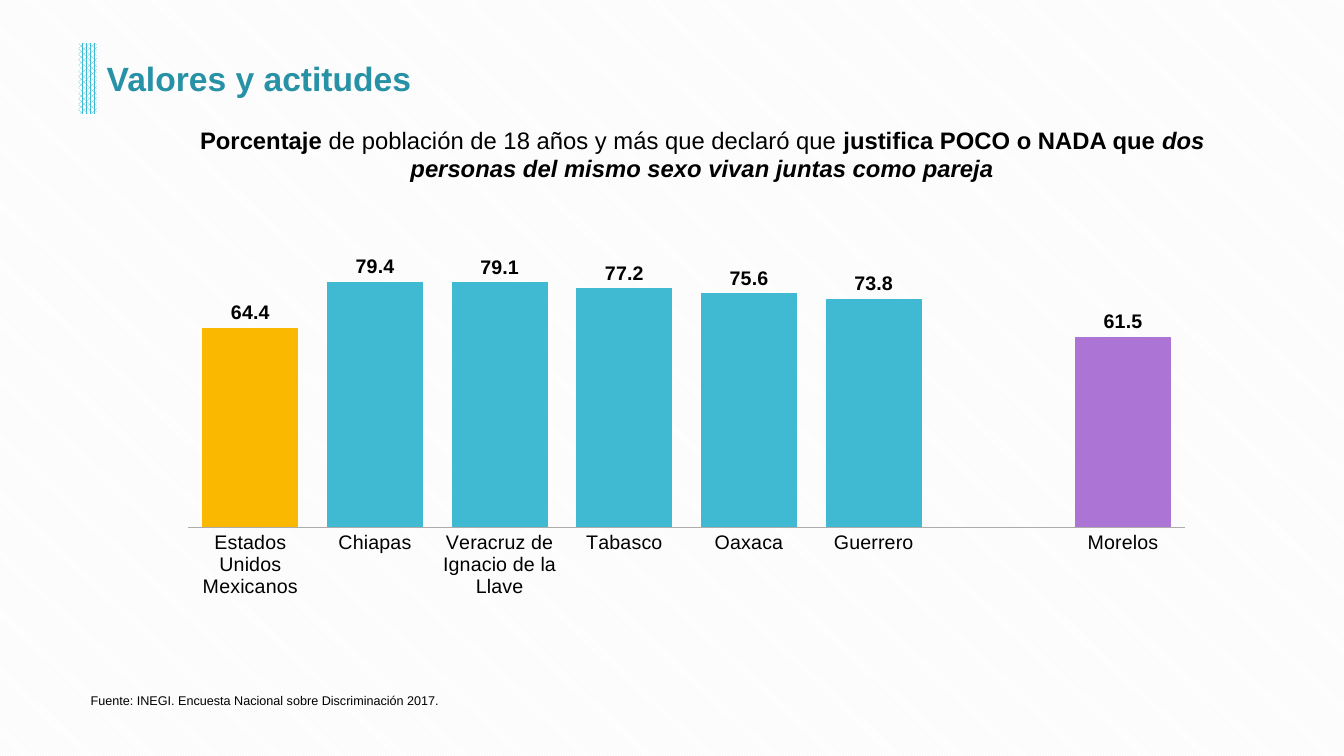
from lxml import etree
from pptx import Presentation
from pptx.chart.data import CategoryChartData
from pptx.dml.color import RGBColor
from pptx.enum import chart as chart_enum, dml, shapes, text
from pptx.oxml import ns
from pptx.util import Inches, Pt

FONT = "Arial"
COLORS = {
    "black": "000000",
    "white": "FFFFFF",
    "stripe": "F2F2F2",
    "title": "2791A6",
    "state": "40BAD2",
    "national": "FAB900",
    "morelos": "AB74D5",
    "axis": "AFABAB",
}
PERCENTAGES = {
    "Estados Unidos\nMexicanos": 64.4,
    "Chiapas": 79.4,
    "Veracruz de\nIgnacio de la\nLlave": 79.1,
    "Tabasco": 77.2,
    "Oaxaca": 75.6,
    "Guerrero": 73.8,
    "": None,
    "Morelos": 61.5,
}
HIGHLIGHTS = {0: "national", 7: "morelos"}
PLOT_AREA = {"x": 0.022, "y": 0.056, "w": 0.966, "h": 0.711}


def color(name):
    return RGBColor.from_string(COLORS[name])


def set_pattern(fill, pattern, foreground):
    fill.patterned()
    fill.pattern = pattern
    fill.fore_color.rgb = color(foreground)
    fill.back_color.rgb = color("white")


def set_font(font, size, color_name="black", bold=False, italic=False):
    font.name = FONT
    font.size = Pt(size)
    font.bold = bold
    font.italic = italic
    font.color.rgb = color(color_name)


def add_text(slide, box, runs, size, anchor, color_name="black", align=text.PP_ALIGN.LEFT):
    """Add one paragraph made of (wording, bold, italic) runs."""
    text_frame = slide.shapes.add_textbox(*map(Inches, box)).text_frame
    text_frame.word_wrap = True
    text_frame.vertical_anchor = anchor
    paragraph = text_frame.paragraphs[0]
    paragraph.alignment = align
    for wording, bold, italic in runs:
        run = paragraph.add_run()
        run.text = wording
        set_font(run.font, size, color_name, bold, italic)


def add_heading(slide, left, top, width, height):
    """Add the patterned marker and the title to its right."""
    marker_width, marker_inset = 0.18, 0.07
    marker = slide.shapes.add_shape(
        shapes.MSO_SHAPE.RECTANGLE, Inches(left), Inches(top + marker_inset),
        Inches(marker_width), Inches(height - 2 * marker_inset + 0.01))
    marker.shadow.inherit = False
    marker.line.fill.background()
    set_pattern(marker.fill, dml.MSO_PATTERN.PERCENT_75, "state")
    add_text(slide, (left + marker_width, top, width - marker_width, height),
             [("Valores y actitudes", True, False)], 24, text.MSO_ANCHOR.MIDDLE, "title")


def add_subtitle(slide, *box):
    runs = [
        ("Porcentaje ", True, False),
        ("de población de 18 años y más que declaró que ", False, False),
        ("justifica POCO o NADA que ", True, False),
        ("dos personas del mismo sexo vivan juntas como pareja", True, True),
    ]
    add_text(slide, box, runs, 17, text.MSO_ANCHOR.BOTTOM, align=text.PP_ALIGN.CENTER)


def add_source(slide, *box):
    wording = "Fuente: INEGI. Encuesta Nacional sobre Discriminación 2017."
    add_text(slide, box, [(wording, False, False)], 9, text.MSO_ANCHOR.BOTTOM)


def set_plot_layout(chart):
    """Fix the inner plot area as fractions of the chart."""
    plot_area = chart.plots[0]._element.getparent()
    for old_layout in plot_area.findall(ns.qn("c:layout")):
        plot_area.remove(old_layout)
    layout = etree.Element(ns.qn("c:layout"))
    manual = etree.SubElement(layout, ns.qn("c:manualLayout"))
    settings = {"layoutTarget": "inner", "xMode": "edge", "yMode": "edge", **PLOT_AREA}
    for tag, value in settings.items():
        etree.SubElement(manual, ns.qn(f"c:{tag}")).set("val", str(value))
    plot_area.insert(0, layout)


def add_percentage_chart(slide, *box):
    data = CategoryChartData(number_format="0.0")
    data.categories = list(PERCENTAGES)
    data.add_series("Series 1", list(PERCENTAGES.values()))
    chart = slide.shapes.add_chart(
        chart_enum.XL_CHART_TYPE.COLUMN_CLUSTERED, *map(Inches, box), data).chart
    chart.has_legend = False
    chart.has_title = False
    set_font(chart.font, 14)
    set_plot_layout(chart)

    category_axis = chart.category_axis
    category_axis.major_tick_mark = chart_enum.XL_TICK_MARK.NONE
    category_axis.format.line.color.rgb = color("axis")
    category_axis.format.line.width = Pt(1)
    value_axis = chart.value_axis
    value_axis.visible = False
    value_axis.has_major_gridlines = False
    value_axis.minimum_scale = 0
    value_axis.maximum_scale = 90

    plot = chart.plots[0]
    plot.gap_width = 30
    plot.vary_by_categories = False
    series = plot.series[0]
    series.format.fill.solid()
    series.format.fill.fore_color.rgb = color("state")
    for index, color_name in HIGHLIGHTS.items():
        fill = series.points[index].format.fill
        fill.solid()
        fill.fore_color.rgb = color(color_name)

    labels = series.data_labels
    labels.show_value = True
    labels.number_format = "0.0"
    labels.number_format_is_linked = False
    labels.position = chart_enum.XL_LABEL_POSITION.OUTSIDE_END
    set_font(labels.font, 14, bold=True)


def main():
    presentation = Presentation()
    presentation.slide_width = Inches(13.33)
    presentation.slide_height = Inches(7.5)
    slide = presentation.slides.add_slide(presentation.slide_layouts[6])
    set_pattern(slide.background.fill, dml.MSO_PATTERN.LIGHT_DOWNWARD_DIAGONAL, "stripe")
    add_heading(slide, 0.78, 0.36, 11.79, 0.83)
    add_source(slide, 0.8, 6.3, 7.85, 0.77)
    add_subtitle(slide, 1.88, 1.19, 10.17, 0.67)
    add_percentage_chart(slide, 1.64, 2.25, 10.24, 3.89)
    presentation.save("out.pptx")


if __name__ == "__main__":
    main()
